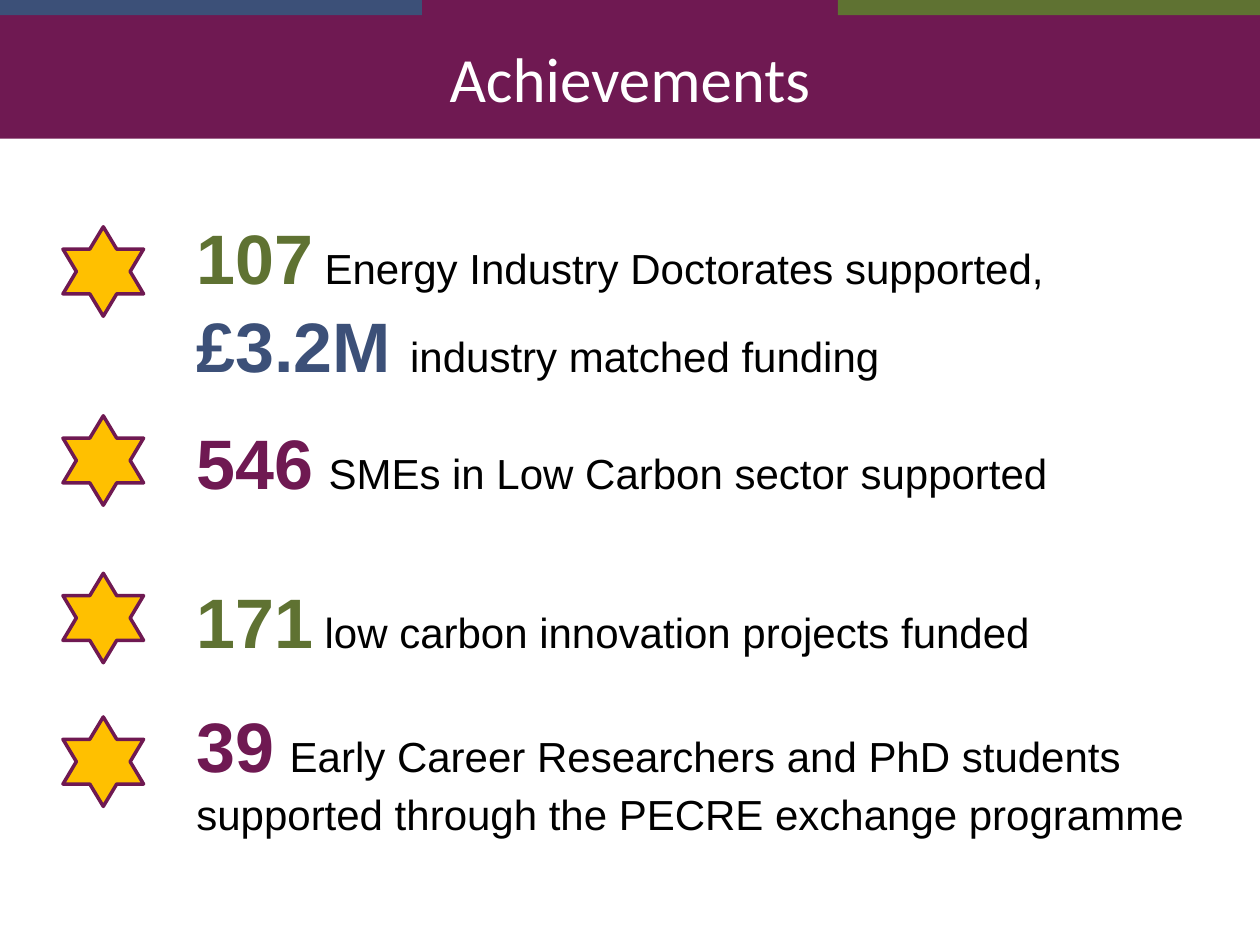
from dataclasses import dataclass

from pptx import Presentation
from pptx.dml.color import RGBColor
from pptx.enum.shapes import MSO_SHAPE
from pptx.enum.text import MSO_ANCHOR, MSO_AUTO_SIZE, PP_ALIGN
from pptx.util import Pt

RECTANGLE = MSO_SHAPE.RECTANGLE
STAR = MSO_SHAPE.STAR_6_POINT
MIDDLE = MSO_ANCHOR.MIDDLE
NO_AUTOFIT = MSO_AUTO_SIZE.NONE
CENTER = PP_ALIGN.CENTER


@dataclass(frozen=True)
class Theme:
    plum: str = "6F1952"
    blue: str = "3C5078"
    green: str = "5F7232"
    gold: str = "FFC000"
    black: str = "000000"
    white: str = "FFFFFF"
    heading_font: str = "Calibri"
    text_font: str = "Arial"
    heading: int = 36
    figure: int = 40
    gap: int = 32
    text: int = 24


theme = Theme()


def write(paragraph, text, *, size=theme.text, color=theme.black, bold=False, font=theme.text_font):
    run = paragraph.add_run()
    run.text = text
    run.font.name = font
    run.font.size = Pt(size)
    run.font.bold = bold
    run.font.color.rgb = RGBColor.from_string(color)


def add_filled(kind, left, top, width, height, color):
    shape = slide.shapes.add_shape(kind, Pt(left), Pt(top), Pt(width), Pt(height))
    shape.shadow.inherit = False
    shape.fill.solid()
    shape.fill.fore_color.rgb = RGBColor.from_string(color)
    shape.line.fill.background()
    return shape


prs = Presentation()
prs.slide_width, prs.slide_height = Pt(720), Pt(540)
slide = prs.slides.add_slide(prs.slide_layouts[5])

for left, color in ((0, theme.blue), (241.2, theme.plum), (478.8, theme.green)):
    add_filled(RECTANGLE, left, 0, 241.2, 8.64, color)

heading = slide.shapes.title
heading.left, heading.top, heading.width, heading.height = Pt(0), Pt(8.64), Pt(720), Pt(70.56)
heading.fill.solid()
heading.fill.fore_color.rgb = RGBColor.from_string(theme.plum)
heading.text_frame.auto_size = NO_AUTOFIT
heading.text_frame.vertical_anchor = MIDDLE
heading_line = heading.text_frame.paragraphs[0]
heading_line.alignment = CENTER
write(heading_line, "Achievements", size=theme.heading, color=theme.white, font=theme.heading_font)

achievements = [
    (129.6, 116.64, 601.2, 104.4, [
        ("107", theme.green, "", " Energy Industry Doctorates supported, "),
        ("£3.2M ", theme.blue, "", "industry matched funding"),
    ]),
    (237.6, 234, 578.88, 55.44, [
        ("546", theme.plum, " ", "SMEs in Low Carbon sector supported"),
    ]),
    (327.6, 324.72, 595.44, 55.44, [
        ("171", theme.green, "", " low carbon innovation projects funded"),
    ]),
    (409.68, 395.28, 601.2, 84.96, [
        ("39", theme.plum, " ",
         "Early Career Researchers and PhD students supported through the PECRE exchange programme"),
    ]),
]

for star_top, top, width, height, lines in achievements:
    star = add_filled(STAR, 36, star_top, 46.08, 51.12, theme.gold)
    star.line.color.rgb = RGBColor.from_string(theme.plum)
    star.line.width = Pt(2)

    achievement = slide.shapes.add_textbox(Pt(105.12), Pt(top), Pt(width), Pt(height)).text_frame
    achievement.word_wrap = True
    statement = achievement.paragraphs[0]
    statement.line_spacing = 1.05
    for number, (figure, color, gap, detail) in enumerate(lines):
        if number:
            statement.add_line_break()
        write(statement, figure, size=theme.figure, color=color, bold=True)
        if gap:
            write(statement, gap, size=theme.gap)
        write(statement, detail)

prs.save("out.pptx")
